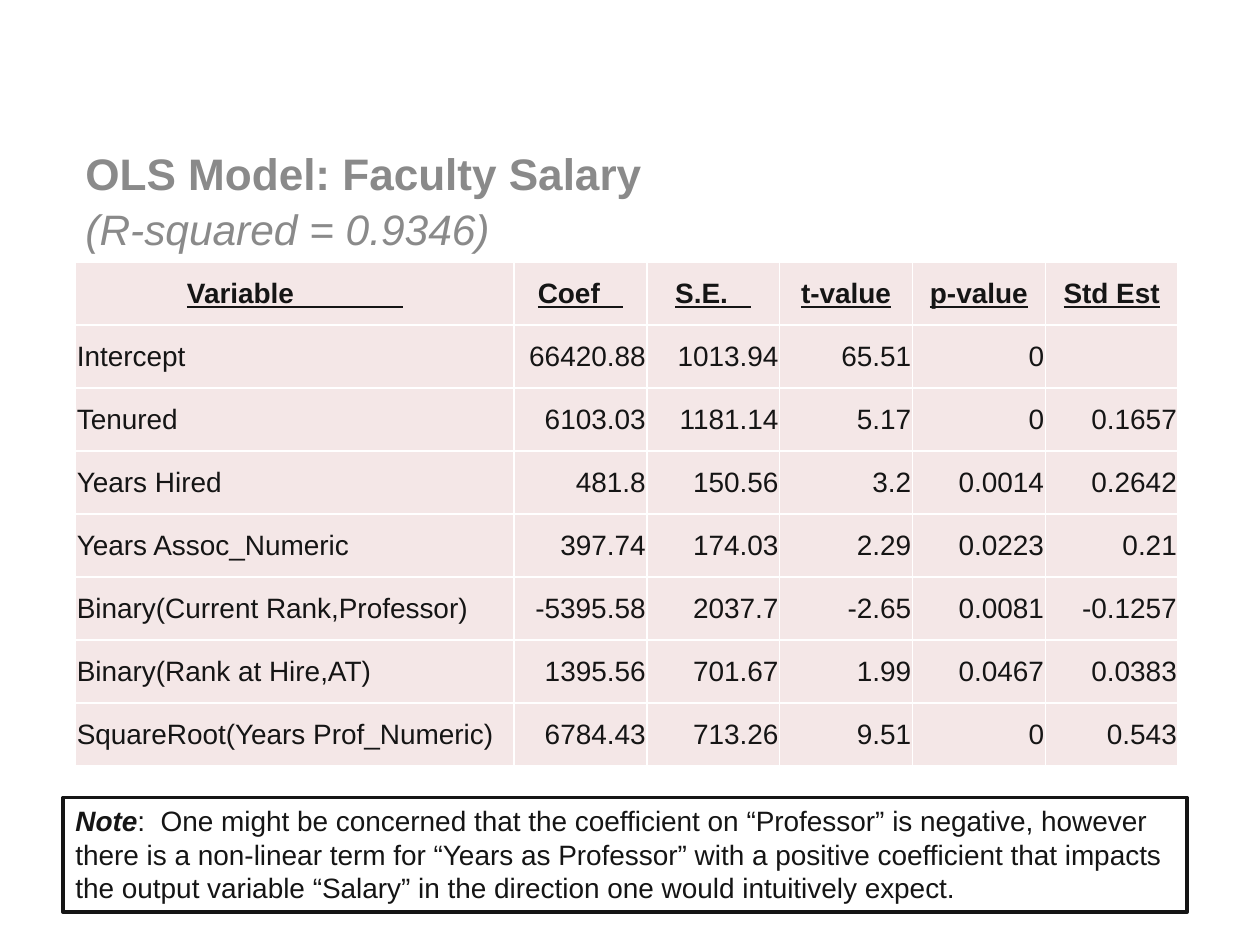
import pptx
import pptx.dml.color
import pptx.enum.shapes
import pptx.enum.text
import pptx.oxml.ns
import pptx.util
from lxml import etree

Inches = pptx.util.Inches
Pt = pptx.util.Pt
ALIGN = pptx.enum.text.PP_ALIGN
ANCHOR = pptx.enum.text.MSO_ANCHOR

COLORS = {"ink": "151515", "title": "8A8A8A", "cell": "F4E7E7", "white": "FFFFFF"}

HEADINGS = ["Variable              ", "Coef   ", "S.E.   ", "t-value", "p-value", "Std Est"]
ESTIMATES = [
    ["Intercept", "66420.88", "1013.94", "65.51", "0", ""],
    ["Tenured", "6103.03", "1181.14", "5.17", "0", "0.1657"],
    ["Years Hired", "481.8", "150.56", "3.2", "0.0014", "0.2642"],
    ["Years Assoc_Numeric", "397.74", "174.03", "2.29", "0.0223", "0.21"],
    ["Binary(Current Rank,Professor)", "-5395.58", "2037.7", "-2.65", "0.0081", "-0.1257"],
    ["Binary(Rank at Hire,AT)", "1395.56", "701.67", "1.99", "0.0467", "0.0383"],
    ["SquareRoot(Years Prof_Numeric)", "6784.43", "713.26", "9.51", "0", "0.543"],
]
NOTE = (
    ":  One might be concerned that the coefficient on “Professor” is negative, however "
    "there is a non-linear term for “Years as Professor” with a positive coefficient that "
    "impacts the output variable “Salary” in the direction one would intuitively expect."
)


def rgb(name):
    return pptx.dml.color.RGBColor.from_string(COLORS[name])


def add_run(paragraph, text, size=16, color="ink", bold=False, italic=False, underline=False):
    run = paragraph.add_run()
    run.text = text
    font = run.font
    font.name = "Arial"
    font.size = Pt(size)
    font.color.rgb = rgb(color)
    font.bold, font.italic, font.underline = bold, italic, underline


def add_title(slide, left, top, width, height):
    title = slide.shapes.add_textbox(left, top, width, height)
    title.text_frame.word_wrap = True
    paragraph = title.text_frame.paragraphs[0]
    paragraph.line_spacing = 1.08
    add_run(paragraph, "OLS Model: Faculty Salary", 25.2, "title", bold=True)
    paragraph.add_line_break()
    add_run(paragraph, "(R-squared = 0.9346)", 24.3, "title", italic=True)


def add_borders(cell):
    properties = cell._tc.get_or_add_tcPr()
    for side in ("a:lnL", "a:lnR", "a:lnT", "a:lnB"):
        line = etree.SubElement(properties, pptx.oxml.ns.qn(side), w=str(Pt(1)))
        fill = etree.SubElement(line, pptx.oxml.ns.qn("a:solidFill"))
        etree.SubElement(fill, pptx.oxml.ns.qn("a:srgbClr"), val=COLORS["white"])


def fill_cell(cell, text, align, heading):
    add_borders(cell)
    cell.fill.solid()
    cell.fill.fore_color.rgb = rgb("cell")
    cell.vertical_anchor = ANCHOR.MIDDLE
    cell.margin_left = cell.margin_right = cell.margin_top = Inches(0.01)
    cell.margin_bottom = 0
    paragraph = cell.text_frame.paragraphs[0]
    paragraph.alignment = align
    if text:
        add_run(paragraph, text, bold=heading, underline=heading)


def add_estimates(slide, left, top, width, height):
    rows = [HEADINGS] + ESTIMATES
    table = slide.shapes.add_table(len(rows), len(HEADINGS), left, top, width, height).table
    variable_width = Inches(3.48)
    value_width = (width - variable_width) // (len(HEADINGS) - 1)
    for index, column in enumerate(table.columns):
        column.width = value_width if index else variable_width
    for row_index, row in enumerate(rows):
        for column_index, text in enumerate(row):
            heading = row_index == 0
            align = ALIGN.CENTER if heading else ALIGN.RIGHT if column_index else ALIGN.LEFT
            fill_cell(table.cell(row_index, column_index), text, align, heading)


def add_note(slide, left, top, width, height):
    rectangle = pptx.enum.shapes.MSO_SHAPE.RECTANGLE
    note = slide.shapes.add_shape(rectangle, left, top, width, height)
    note.shadow.inherit = False
    note.fill.solid()
    note.fill.fore_color.rgb = rgb("white")
    note.line.color.rgb = rgb("ink")
    note.line.width = Pt(2)
    frame = note.text_frame
    frame.word_wrap = True
    frame.auto_size = pptx.enum.text.MSO_AUTO_SIZE.SHAPE_TO_FIT_TEXT
    frame.vertical_anchor = ANCHOR.TOP
    paragraph = frame.paragraphs[0]
    paragraph.alignment = ALIGN.LEFT
    add_run(paragraph, "Note", bold=True, italic=True)
    add_run(paragraph, NOTE)


def main():
    deck = pptx.Presentation()
    deck.slide_width, deck.slide_height = Inches(10), Inches(7.5)
    slide = deck.slides.add_slide(deck.slide_layouts[6])
    add_title(slide, Inches(0.58), Inches(1.08), Inches(8.92), Inches(0.58))
    add_estimates(slide, Inches(0.6), Inches(2.08), Inches(8.75), Inches(4))
    add_note(slide, Inches(0.5), Inches(6.33), Inches(8.92), Inches(0.91))
    deck.save("out.pptx")


if __name__ == "__main__":
    main()
